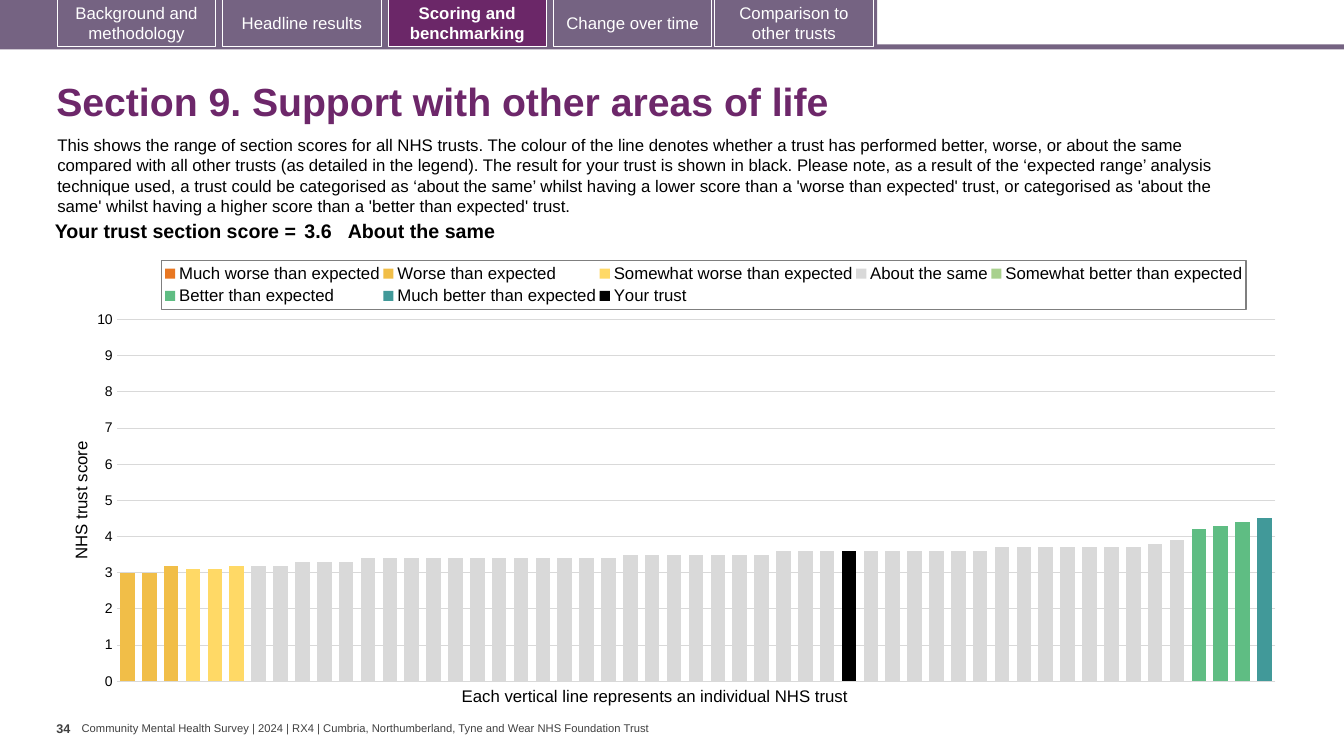
import copy
import lxml.etree
import pptx
import pptx.chart.data
import pptx.dml.color
import pptx.enum.chart
import pptx.enum.shapes
import pptx.enum.text
import pptx.oxml
import pptx.oxml.ns
import pptx.util

Inches = pptx.util.Inches
Pt = pptx.util.Pt
RGBColor = pptx.dml.color.RGBColor
ALIGN = pptx.enum.text.PP_ALIGN
ANCHOR = pptx.enum.text.MSO_ANCHOR
qn = pptx.oxml.ns.qn

BLACK = RGBColor(0x00, 0x00, 0x00)
WHITE = RGBColor(0xFF, 0xFF, 0xFF)
FOOTER_GREY = RGBColor(0x40, 0x40, 0x40)
GRID_GREY = RGBColor(0xD9, 0xD9, 0xD9)
BAND = RGBColor(0x75, 0x63, 0x82)
ACTIVE = RGBColor(0x6B, 0x27, 0x68)
TITLE = RGBColor(0x6D, 0x27, 0x6A)

BANDS = [(0, 0.44, 13.33, 0.05), (0, 0, 8.7, 0.47)]
TABS = [
    (0.57, "Background and methodology"),
    (2.21, "Headline results"),
    (3.85, "Scoring and benchmarking"),
    (5.49, "Change over time"),
    (7.09, "Comparison to other trusts"),
]
ACTIVE_TAB = "Scoring and benchmarking"

INTRO = (
    "This shows the range of section scores for all NHS trusts. The colour of the line denotes whether "
    "a trust has performed better, worse, or about the same compared with all other trusts (as detailed "
    "in the legend). The result for your trust is shown in black. Please note, as a result of the "
    "‘expected range’ analysis technique used, a trust could be categorised as ‘about the same’ whilst "
    "having a lower score than a 'worse than expected' trust, or categorised as 'about the same' whilst "
    "having a higher score than a 'better than expected' trust."
)
FOOTER = "Community Mental Health Survey | 2024 | RX4 | Cumbria, Northumberland, Tyne and Wear NHS Foundation Trust"
DEFAULT_INSETS = (0.1, 0.05, 0.1, 0.05)
TEXTS = [
    ("Section 9. Support with other areas of life", (0.46, 0.67, 12.49, 0.72),
     {"size": Pt(28), "bold": True}, TITLE, ANCHOR.MIDDLE, DEFAULT_INSETS, True, 0.9),
    (INTRO, (0.47, 1.29, 12.13, 0.91), {"size": Pt(12)}, BLACK, ANCHOR.TOP, DEFAULT_INSETS, True, 1.0),
    ("Each vertical line represents an individual NHS trust", (4.48, 6.75, 4.11, 0.3),
     {"size": Pt(12)}, BLACK, ANCHOR.TOP, DEFAULT_INSETS, False, 1.0),
    ("34", (0.56, 7.1, 0.25, 0.4), {"size": Pt(9), "bold": True},
     FOOTER_GREY, ANCHOR.TOP, (0, 0.05, 0, 0.05), False, 1.0),
    (FOOTER, (0.81, 7.16, 5.71, 0.13), {"size": Pt(8)},
     FOOTER_GREY, ANCHOR.MIDDLE, (0, 0, 0, 0), False, 1.0),
]

SCORE_CELLS = [
    ("Your trust section score =", 2.63, ALIGN.RIGHT, 0.04),
    ("3.6", 0.47, ALIGN.LEFT, 0.04),
    ("About the same", 8.59, ALIGN.LEFT, 0),
]

TRUST_COUNT = 53
SAME_SCORES = ([3.2] * 2 + [3.3] * 3 + [3.4] * 12 + [3.5] * 7 + [3.6] * 10 + [3.7] * 7 + [3.8, 3.9])
SERIES = [
    ("Much worse than expected", RGBColor(0xE8, 0x77, 0x22), 0, []),
    ("Worse than expected", RGBColor(0xF1, 0xBE, 0x48), 0, [3, 3, 3.2]),
    ("Somewhat worse than expected", RGBColor(0xFF, 0xD9, 0x66), 3, [3.1, 3.1, 3.2]),
    ("About the same", GRID_GREY, 6, SAME_SCORES),
    ("Somewhat better than expected", RGBColor(0xA9, 0xD1, 0x8E), 0, []),
    ("Better than expected", RGBColor(0x5F, 0xBD, 0x83), 49, [4.2, 4.3, 4.4]),
    ("Much better than expected", RGBColor(0x41, 0x99, 0x99), 52, [4.5]),
    ("Your trust", BLACK, 33, [3.6]),
]
PLOT_BOX = (0.04, 0.158, 0.946, 0.808)
LEGEND_BOX = (0.077, 0.025, 0.885, 0.11)
LEGEND_BORDER = (
    '<c:spPr xmlns:c="http://schemas.openxmlformats.org/drawingml/2006/chart" '
    'xmlns:a="http://schemas.openxmlformats.org/drawingml/2006/main"><a:ln w="9525">'
    '<a:solidFill><a:srgbClr val="7F7F7F"/></a:solidFill></a:ln></c:spPr>'
)


def apply_format(target, values):
    for name, value in values.items():
        setattr(target, name, value)


def style_font(font, values, color):
    apply_format(font, {"name": "Arial", **values})
    font.color.rgb = color


def set_insets(target, insets):
    names = ("margin_left", "margin_top", "margin_right", "margin_bottom")
    apply_format(target, {name: Inches(inset) for name, inset in zip(names, insets)})


def add_rectangle(page, box, fill):
    shape = page.shapes.add_shape(pptx.enum.shapes.MSO_SHAPE.RECTANGLE, *map(Inches, box))
    shape.shadow.inherit = False
    shape.fill.solid()
    shape.fill.fore_color.rgb = fill
    shape.line.fill.background()
    return shape


def add_tab(page, left, label):
    active = label == ACTIVE_TAB
    tab = add_rectangle(page, (left, -0.01, 1.57, 0.47), ACTIVE if active else BAND)
    tab.line.color.rgb = WHITE
    tab.line.width = Pt(0.75)
    frame = tab.text_frame
    apply_format(frame, {"text": label, "word_wrap": True, "vertical_anchor": ANCHOR.MIDDLE})
    frame.paragraphs[0].alignment = ALIGN.CENTER
    style_font(frame.paragraphs[0].runs[0].font, {"size": Pt(12), "bold": active}, WHITE)


def add_text(page, text, box, values, color, anchor, insets, wrap, spacing):
    frame = page.shapes.add_textbox(*map(Inches, box)).text_frame
    apply_format(frame, {"text": text, "word_wrap": wrap, "vertical_anchor": anchor})
    set_insets(frame, insets)
    para = frame.paragraphs[0]
    para.line_spacing = spacing
    style_font(para.runs[0].font, values, color)


def add_score(page):
    table = page.shapes.add_table(
        1, len(SCORE_CELLS), Inches(0.35), Inches(2.15), Inches(11.69), Inches(0.31)).table
    apply_format(table, {"first_row": False, "horz_banding": False})
    for index, (text, width, alignment, side) in enumerate(SCORE_CELLS):
        table.columns[index].width = Inches(width)
        cell = table.cell(0, index)
        cell.fill.background()
        cell.text = text
        set_insets(cell, (side, 0.04, side, 0.04))
        para = cell.text_frame.paragraphs[0]
        para.alignment = alignment
        style_font(para.runs[0].font, {"size": Pt(14), "bold": True}, BLACK)


def place(parent, index, box, inner):
    for existing in parent.findall(qn("c:layout")):
        parent.remove(existing)
    layout = lxml.etree.Element(qn("c:layout"))
    manual = lxml.etree.SubElement(layout, qn("c:manualLayout"))
    settings = [("layoutTarget", "inner")] if inner else []
    settings += [("xMode", "edge"), ("yMode", "edge")] + list(zip("xywh", map(str, box)))
    for name, value in settings:
        lxml.etree.SubElement(manual, qn("c:" + name)).set("val", value)
    parent.insert(index, layout)


def move_last_series_to_right_axis(area):
    bars = area.find(qn("c:barChart"))
    right_bars = copy.deepcopy(bars)
    bars.remove(bars.findall(qn("c:ser"))[-1])
    for series in right_bars.findall(qn("c:ser"))[:-1]:
        right_bars.remove(series)
    bars.addnext(right_bars)
    category, value = [copy.deepcopy(area.find(qn(tag))) for tag in ("c:catAx", "c:valAx")]
    for tag in ("c:majorGridlines", "c:title"):
        value.remove(value.find(qn(tag)))
    for axis, own, other in ((category, "5001", "5002"), (value, "5002", "5001")):
        axis.find(qn("c:axId")).set("val", own)
        axis.find(qn("c:crossAx")).set("val", other)
    for identifier, number in zip(right_bars.findall(qn("c:axId")), ("5001", "5002")):
        identifier.set("val", number)
    for tag, setting in (("c:axPos", "r"), ("c:tickLblPos", "none"), ("c:crosses", "max")):
        value.find(qn(tag)).set("val", setting)
    area.find(qn("c:valAx")).addnext(value)
    value.addnext(category)


def add_scores_chart(page):
    data = pptx.chart.data.CategoryChartData()
    data.categories = [str(number) for number in range(1, TRUST_COUNT + 1)]
    for name, color, start, scores in SERIES:
        data.add_series(name, [None] * start + scores + [None] * (TRUST_COUNT - start - len(scores)))
    chart = page.shapes.add_chart(
        pptx.enum.chart.XL_CHART_TYPE.COLUMN_CLUSTERED, *map(Inches, (0.67, 2.47, 12.15, 4.44)), data).chart
    apply_format(chart, {"has_title": False, "has_legend": True})
    style_font(chart.font, {"name": "Calibri", "size": Pt(10)}, BLACK)
    plot = chart.plots[0]
    apply_format(plot, {"gap_width": 50, "overlap": 100, "vary_by_categories": False})
    for series, (name, color, start, scores) in zip(plot.series, SERIES):
        series.format.fill.solid()
        series.format.fill.fore_color.rgb = color
    chart.category_axis.visible = False
    axis = chart.value_axis
    apply_format(axis, {"minimum_scale": 0, "maximum_scale": 10, "major_unit": 1,
                        "major_tick_mark": pptx.enum.chart.XL_TICK_MARK.NONE})
    axis.format.line.fill.background()
    axis.major_gridlines.format.line.color.rgb = GRID_GREY
    axis.major_gridlines.format.line.width = Pt(0.75)
    style_font(axis.tick_labels.font, {"size": Pt(10)}, BLACK)
    axis.axis_title.text_frame.text = "NHS trust score"
    style_font(axis.axis_title.text_frame.paragraphs[0].runs[0].font, {"size": Pt(12), "bold": False}, BLACK)
    legend = chart.legend
    apply_format(legend, {"position": pptx.enum.chart.XL_LEGEND_POSITION.TOP, "include_in_layout": False})
    style_font(legend.font, {"size": Pt(12)}, BLACK)
    area = chart.element.find(".//" + qn("c:plotArea"))
    key = chart.element.find(".//" + qn("c:legend"))
    place(area, 0, PLOT_BOX, True)
    place(key, 1, LEGEND_BOX, False)
    key.find(qn("c:txPr")).addprevious(pptx.oxml.parse_xml(LEGEND_BORDER))
    move_last_series_to_right_axis(area)


def main():
    deck = pptx.Presentation()
    apply_format(deck, {"slide_width": Inches(13.33), "slide_height": Inches(7.5)})
    page = deck.slides.add_slide(deck.slide_layouts[6])
    for box in BANDS:
        add_rectangle(page, box, BAND)
    for left, label in TABS:
        add_tab(page, left, label)
    for entry in TEXTS:
        add_text(page, *entry)
    add_scores_chart(page)
    add_score(page)
    deck.save("out.pptx")


if __name__ == "__main__":
    main()
